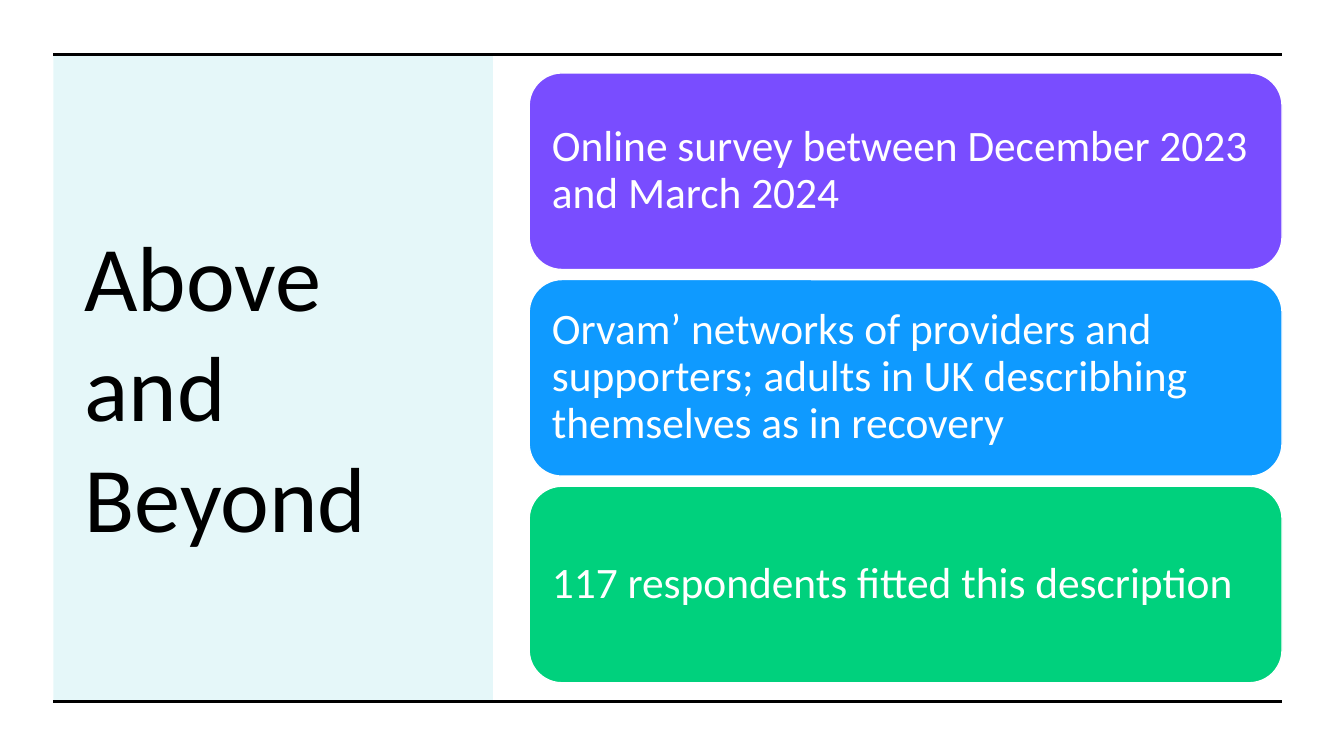
from lxml import etree
from pptx import Presentation
from pptx import util as u
from pptx.dml.color import RGBColor
from pptx.enum import shapes, text
from pptx.oxml import ns

TITLE = "Above and Beyond"
FACTS = [
    ("Online survey between December 2023 and March 2024", "794DFF"),
    ("Orvam’ networks of providers and supporters; "
     "adults in UK describhing themselves as in recovery", "0F9AFF"),
    ("117 respondents fitted this description", "00D17D"),
]
THEME = {
    "font": "Calibri", "title": 66, "body": 31,
    "ink": "000000", "paper": "FFFFFF", "panel": "00BAC8", "alpha": 10000,
}
LEFT, RIGHT, TOP, BASE = 38.2, 915.8, 38.9, 501.1
PANEL_W = 313.9
CARD_X, CARD_Y, CARD_H, STEP = 378, 52.1, 140.4, 147.6
PAD = 9.4


def color(name):
    return RGBColor.from_string(name)


def pts(*nums):
    return [u.Pt(n) for n in nums]


def add_box(kind, box, fill):
    shape = slide.shapes.add_shape(kind, *pts(*box))
    shape.shadow.inherit = False
    shape.fill.solid()
    shape.fill.fore_color.rgb = color(fill)
    shape.line.fill.background()
    return shape


def add_text(shape, words, size, ink, pad):
    frame = shape.text_frame
    frame.word_wrap = True
    frame.vertical_anchor = text.MSO_ANCHOR.MIDDLE
    frame.margin_left, frame.margin_top, frame.margin_right, frame.margin_bottom = pts(*pad)
    para = frame.paragraphs[0]
    para.alignment = text.PP_ALIGN.LEFT
    run = para.add_run()
    run.text = words
    run.font.name = THEME["font"]
    run.font.size = u.Pt(size)
    run.font.color.rgb = color(ink)
    return para


def add_rule(y):
    rule = slide.shapes.add_connector(shapes.MSO_CONNECTOR.STRAIGHT, *pts(LEFT, y, RIGHT, y))
    rule.line.color.rgb = color(THEME["ink"])
    rule.line.width = u.Pt(2.25)
    etree.SubElement(rule._element.spPr, ns.qn("a:effectLst"))


deck = Presentation()
deck.slide_width, deck.slide_height = pts(960, 540)
slide = deck.slides.add_slide(deck.slide_layouts[6])

panel = add_box(shapes.MSO_SHAPE.RECTANGLE, (LEFT, TOP, PANEL_W, BASE - TOP), THEME["panel"])
tint = panel._element.spPr.find(".//" + ns.qn("a:srgbClr"))
etree.SubElement(tint, ns.qn("a:alpha"), val=str(THEME["alpha"]))

title = slide.shapes.add_textbox(*pts(53.3, 77, 280, 396))
add_text(title, TITLE, THEME["title"], THEME["ink"], (7.2, 3.6, 7.2, 3.6))

for y in (TOP, BASE):
    add_rule(y)

for i, (words, fill) in enumerate(FACTS):
    box = (CARD_X, CARD_Y + i * STEP, RIGHT - CARD_X, CARD_H)
    card = add_box(shapes.MSO_SHAPE.ROUNDED_RECTANGLE, box, fill)
    card.line.color.rgb = color(THEME["paper"])
    card.line.width = u.Pt(1)
    para = add_text(card, words, THEME["body"], THEME["paper"], (PAD,) * 4)
    para.line_spacing = 0.9

deck.save("out.pptx")
